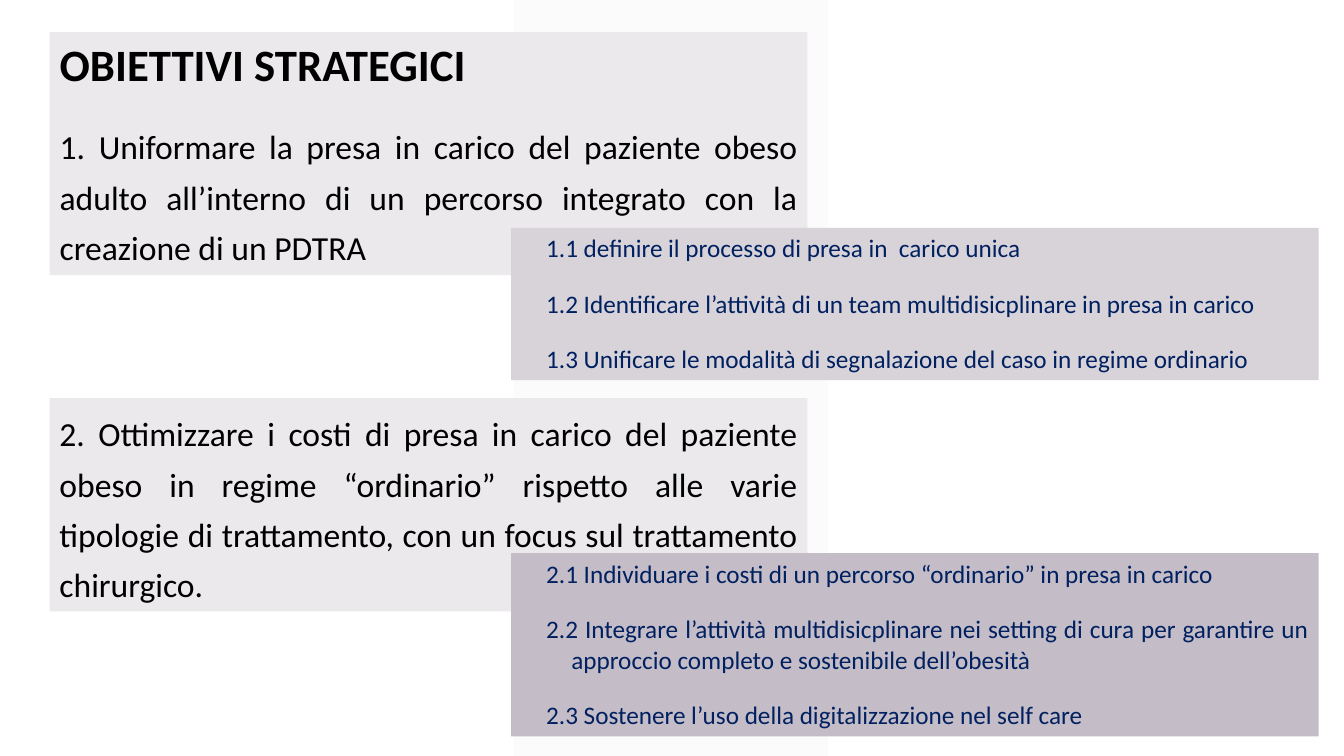
from lxml import etree
from pptx import Presentation
from pptx import util as u
from pptx.dml.color import RGBColor
from pptx.enum import shapes, text
from pptx.oxml.ns import qn

BLACK = RGBColor(0x00, 0x00, 0x00)
NAVY = RGBColor(0x00, 0x20, 0x60)
BAND = RGBColor(0xF2, 0xF2, 0xF2)
PALE = RGBColor(0xEB, 0xE9, 0xEC)
MID = RGBColor(0xD8, 0xD3, 0xD9)
DARK = RGBColor(0xC4, 0xBC, 0xC6)

LEFT, WIDE = 1.25, 19.1
INNER, SPAN = 12.88, 20.35

HEAD = "OBIETTIVI STRATEGICI"
AIMS = [
    "1. Uniformare la presa in carico del paziente obeso adulto all’interno di un percorso integrato con la creazione di un PDTRA",
    "2. Ottimizzare i costi di presa in carico del paziente obeso in regime “ordinario” rispetto alle varie tipologie di trattamento, con un focus sul trattamento chirurgico.",
]
STEPS = [
    [
        "1.1 definire il processo di presa in  carico unica",
        "1.2 Identificare l’attività di un team multidisicplinare in presa in carico",
        "1.3 Unificare le modalità di segnalazione del caso in regime ordinario",
    ],
    [
        "2.1 Individuare i costi di un percorso “ordinario” in presa in carico",
        "2.2 Integrare l’attività multidisicplinare nei setting di cura per garantire un approccio completo e sostenibile dell’obesità",
        "2.3 Sostenere l’uso della digitalizzazione nel self care",
    ],
]


def write(frame, words, size=24, color=BLACK, bold=False,
          align=text.PP_ALIGN.JUSTIFY, lines=None, hang=None):
    para = frame.paragraphs[0]
    if para.runs:
        para = frame.add_paragraph()
    para.alignment = align
    para.space_after = u.Pt(18)
    if lines:
        para.line_spacing = lines
    if hang:
        props = para._p.get_or_add_pPr()
        props.set("marL", str(2 * u.Cm(hang)))
        props.set("indent", str(-u.Cm(hang)))
    run = para.add_run()
    run.text = words
    font = run.font
    font.name, font.size, font.bold = "Calibri", u.Pt(size), bold
    font.color.rgb = color


def place(shape, box, fill):
    shape.left, shape.top, shape.width, shape.height = map(u.Cm, box)
    shape.fill.solid()
    shape.fill.fore_color.rgb = fill
    frame = shape.text_frame
    frame.word_wrap = True
    frame.auto_size = text.MSO_AUTO_SIZE.SHAPE_TO_FIT_TEXT
    frame.vertical_anchor = text.MSO_ANCHOR.TOP
    return frame


def draw_band(slide, box):
    band = slide.shapes.add_shape(
        shapes.MSO_SHAPE.PARALLELOGRAM, *map(u.Cm, box))
    band.adjustments[0] = 0
    band.shadow.inherit = False
    band.line.fill.background()
    band.fill.solid()
    band.fill.fore_color.rgb = BAND
    tint = band.fill._xPr.find(".//" + qn("a:srgbClr"))
    etree.SubElement(tint, qn("a:alpha"), val="30000")
    slide.shapes._spTree.insert(2, band._element)


def draw_aim(shape, box, aim, head=None):
    frame = place(shape, box, PALE)
    if head:
        write(frame, head, size=32, bold=True, align=text.PP_ALIGN.LEFT)
    write(frame, aim, lines=1.25)


def draw_steps(slide, box, steps, fill):
    frame = place(slide.shapes.add_textbox(0, 0, 0, 0), box, fill)
    for step in steps:
        write(frame, step, size=18, color=NAVY, hang=0.635)


def main():
    deck = Presentation()
    deck.slide_width, deck.slide_height = u.Cm(33.87), u.Cm(19.05)
    slide = deck.slides.add_slide(deck.slide_layouts[5])
    draw_band(slide, (12.95, 0, 7.92, 19.05))
    draw_aim(slide.shapes.title, (LEFT, 0.81, WIDE, 6.12), AIMS[0], HEAD)
    lower = slide.shapes.add_textbox(0, 0, 0, 0)
    draw_aim(lower, (LEFT, 10.03, WIDE, 5.38), AIMS[1])
    draw_steps(slide, (INNER, 5.74, SPAN, 3.84), STEPS[0], MID)
    draw_steps(slide, (INNER, 13.94, SPAN, 4.62), STEPS[1], DARK)
    deck.save("out.pptx")


if __name__ == "__main__":
    main()
